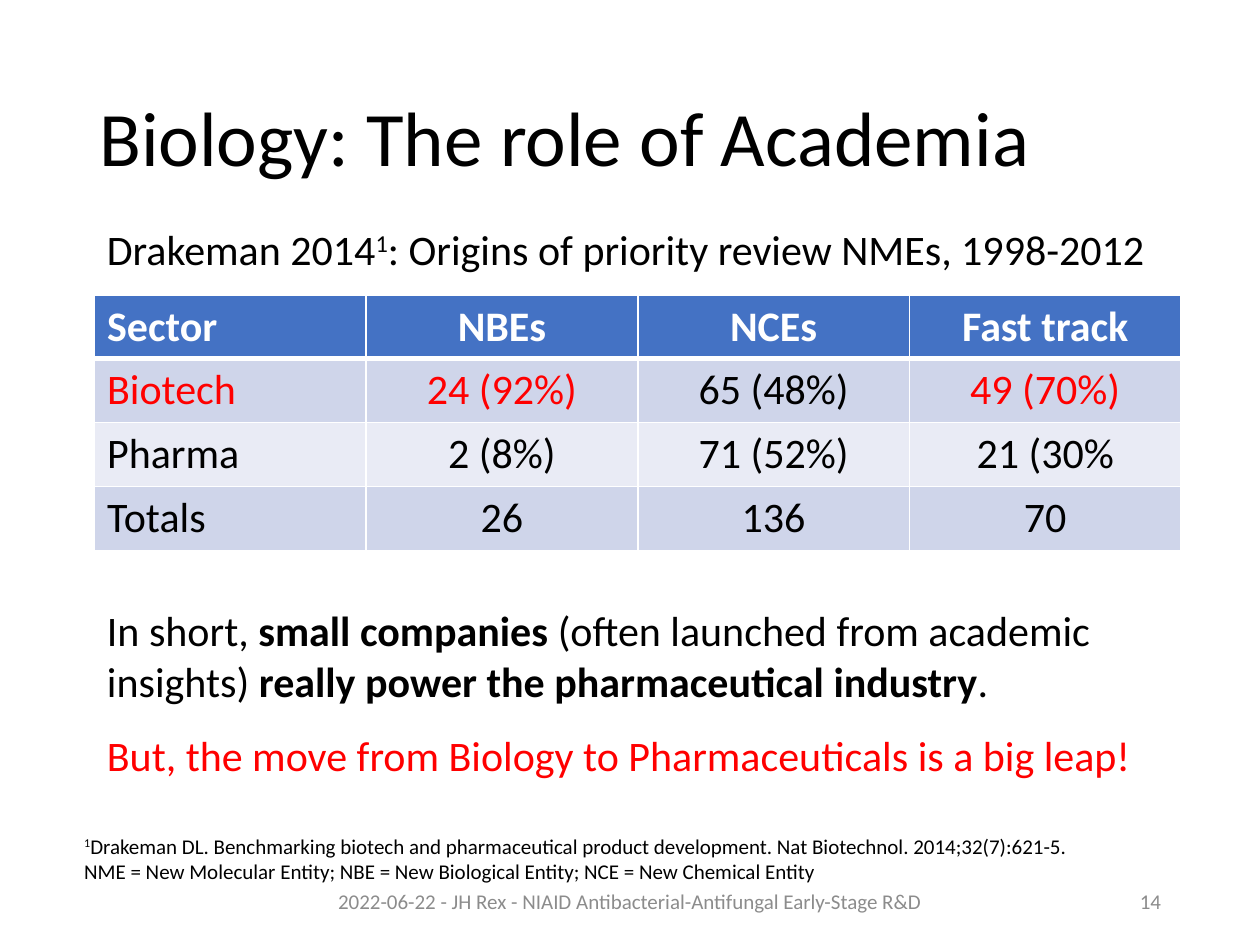
"""Builds the slide on the role of academia in drug origins."""
from lxml import etree
from pptx import Presentation
from pptx.dml.color import RGBColor
from pptx.enum.text import MSO_ANCHOR, PP_ALIGN
from pptx.oxml.ns import qn
from pptx.util import Pt

LEFT, CENTER, RIGHT = PP_ALIGN.LEFT, PP_ALIGN.CENTER, PP_ALIGN.RIGHT
TOP, MIDDLE = MSO_ANCHOR.TOP, MSO_ANCHOR.MIDDLE
BLACK = RGBColor(0x00, 0x00, 0x00)
WHITE = RGBColor(0xFF, 0xFF, 0xFF)
RED = RGBColor(0xFF, 0x00, 0x00)
GRAY = RGBColor(0x8C, 0x8C, 0x8C)
BLUE = RGBColor(0x44, 0x72, 0xC4)
BAND_DARK = RGBColor(0xCF, 0xD5, 0xEA)
BAND_LIGHT = RGBColor(0xE9, 0xEB, 0xF5)

SECTOR_ROWS = [
    ["Sector", "NBEs", "NCEs", "Fast track"],
    ["Biotech", "24 (92%)", "65 (48%)", "49 (70%)"],
    ["Pharma", "2 (8%)", "71 (52%)", "21 (30%"],
    ["Totals", "26", "136", "70"],
]
HIGHLIGHTS = {"Biotech", "24 (92%)", "49 (70%)"}


class SlideBuilder:
    """Holds the text style and the current slide."""

    def __init__(self, page, font="Calibri"):
        self.page = page
        self.font = font

    def add_spans(self, para, spans, size, color=BLACK, align=LEFT):
        """Adds (text, style) spans, where style is '', 'bold' or 'super'."""
        para.alignment = align
        for text, style in spans:
            span = para.add_run()
            span.text = text
            span.font.name = self.font
            span.font.size = Pt(size)
            span.font.bold = style == "bold"
            span.font.color.rgb = color
            if style == "super":
                span.font._element.set("baseline", "30000")

    def title(self, text, left, top, width, height):
        """Places and fills the title placeholder."""
        box = self.page.shapes.title
        box.left, box.top, box.width, box.height = map(Pt, (left, top, width, height))
        box.text_frame.vertical_anchor = MIDDLE
        para = box.text_frame.paragraphs[0]
        para.line_spacing = 0.9
        self.add_spans(para, [(text, "")], 44)

    def text(self, area, paragraphs, size, align=LEFT, anchor=TOP, gap=0):
        """Adds a text box from (spans, color) paragraphs."""
        frame = self.page.shapes.add_textbox(*map(Pt, area)).text_frame
        frame.word_wrap = True
        frame.vertical_anchor = anchor
        for index, (spans, color) in enumerate(paragraphs):
            para = frame.add_paragraph() if index else frame.paragraphs[0]
            if index:
                para.space_before = Pt(gap)
            self.add_spans(para, spans, size, color, align)

    def border(self, cell, side, width):
        """Draws one white cell edge."""
        line = etree.SubElement(cell._tc.get_or_add_tcPr(), qn(f"a:ln{side}"), w=str(Pt(width)))
        fill = etree.SubElement(line, qn("a:solidFill"))
        etree.SubElement(fill, qn("a:srgbClr"), val=str(WHITE))

    def table(self, rows, left, top, width, row_height):
        """Adds a banded table with a bold header row."""
        area = map(Pt, (left, top, width, row_height * len(rows)))
        grid = self.page.shapes.add_table(len(rows), len(rows[0]), *area).table
        for r, row in enumerate(rows):
            for c, text in enumerate(row):
                cell = grid.cell(r, c)
                for side in "LRTB":
                    heavy = (r, side) in ((0, "B"), (1, "T"))
                    self.border(cell, side, 3 if heavy else 1)
                cell.fill.solid()
                band = BAND_DARK if r % 2 else BAND_LIGHT
                cell.fill.fore_color.rgb = band if r else BLUE
                color = RED if text in HIGHLIGHTS else BLACK if r else WHITE
                self.add_spans(cell.text_frame.paragraphs[0], [(text, "" if r else "bold")],
                               24, color, CENTER if c else LEFT)


def main():
    """Builds and saves the deck."""
    deck = Presentation()
    deck.slide_width, deck.slide_height = Pt(720), Pt(540)
    slide = SlideBuilder(deck.slides.add_slide(deck.slide_layouts[5]))

    slide.title("Biology: The role of Academia", 49.5, 28.75, 621, 104.4)
    slide.table(SECTOR_ROWS, 54, 168.5, 621, 36)
    footer = "2022-06-22 - JH Rex - NIAID Antibacterial-Antifungal Early-Stage R&D"
    slide.text((172.8, 500.5, 374.4, 28.75), [([(footer, "")], GRAY)], 12, CENTER, MIDDLE)
    slide.text((508.5, 500.5, 162, 28.75), [([("14", "")], GRAY)], 12, RIGHT, MIDDLE)

    citation = ("Drakeman DL. Benchmarking biotech and pharmaceutical product development. "
                "Nat Biotechnol. 2014;32(7):621-5.")
    glossary = ("NME = New Molecular Entity; NBE = New Biological Entity; "
                "NCE = New Chemical Entity")
    slide.text((41, 472.5, 582.5, 36),
               [([("1", "super"), (citation, "")], BLACK), ([(glossary, "")], BLACK)], 12)
    slide.text((54, 124, 631, 36),
               [([("Drakeman 2014", ""), ("1", "super"),
                  (": Origins of priority review NMEs, 1998-2012", "")], BLACK)], 24)
    summary = [("In short, ", ""), ("small companies ", "bold"),
               ("(often launched from academic insights) ", ""),
               ("really power the pharmaceutical industry", "bold"), (".", "")]
    warning = [("But, the move from Biology to Pharmaceuticals is a big leap!", "")]
    slide.text((54, 342, 610, 108.75), [(summary, BLACK), (warning, RED)], 24, gap=14)

    deck.save("out.pptx")


if __name__ == "__main__":
    main()
